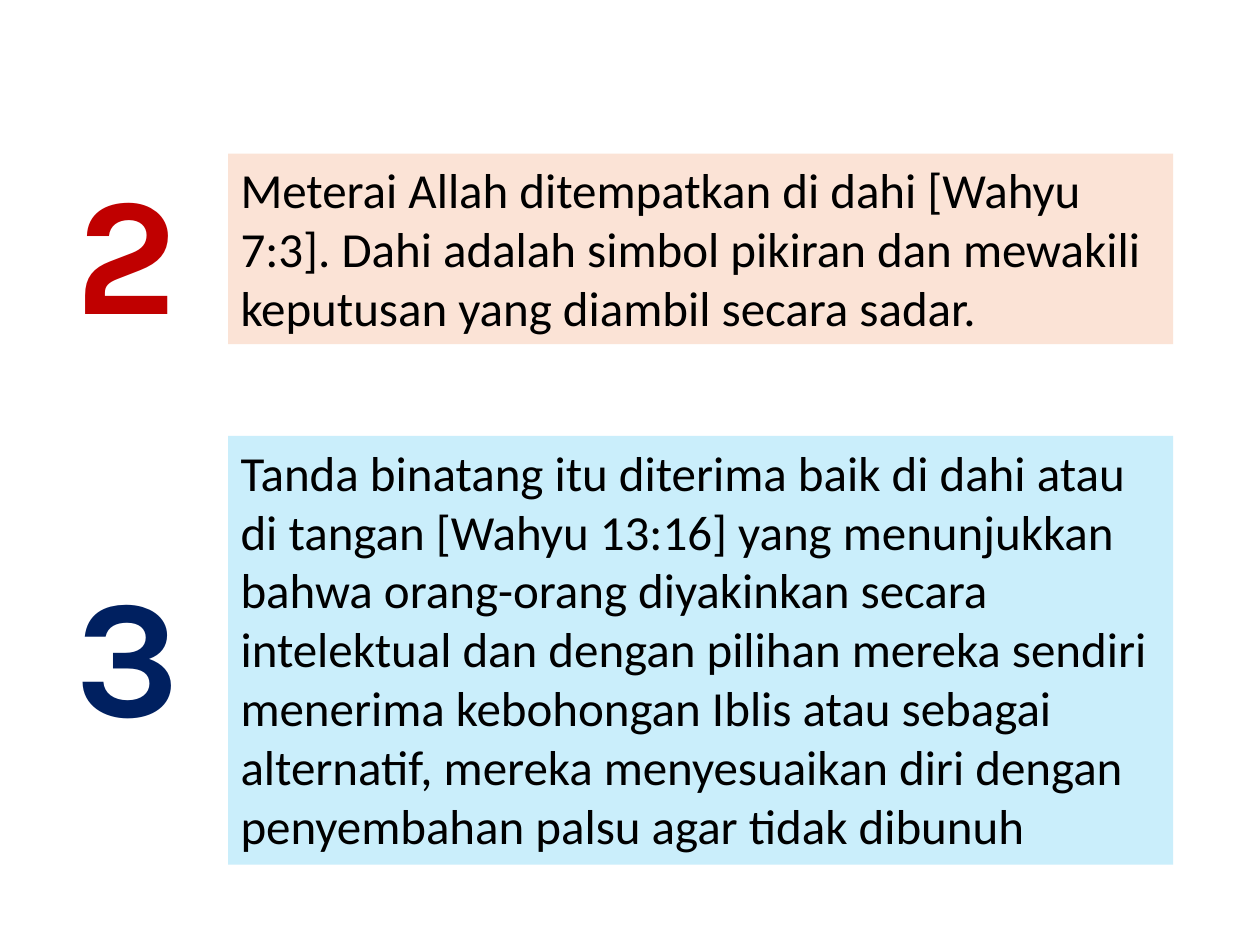
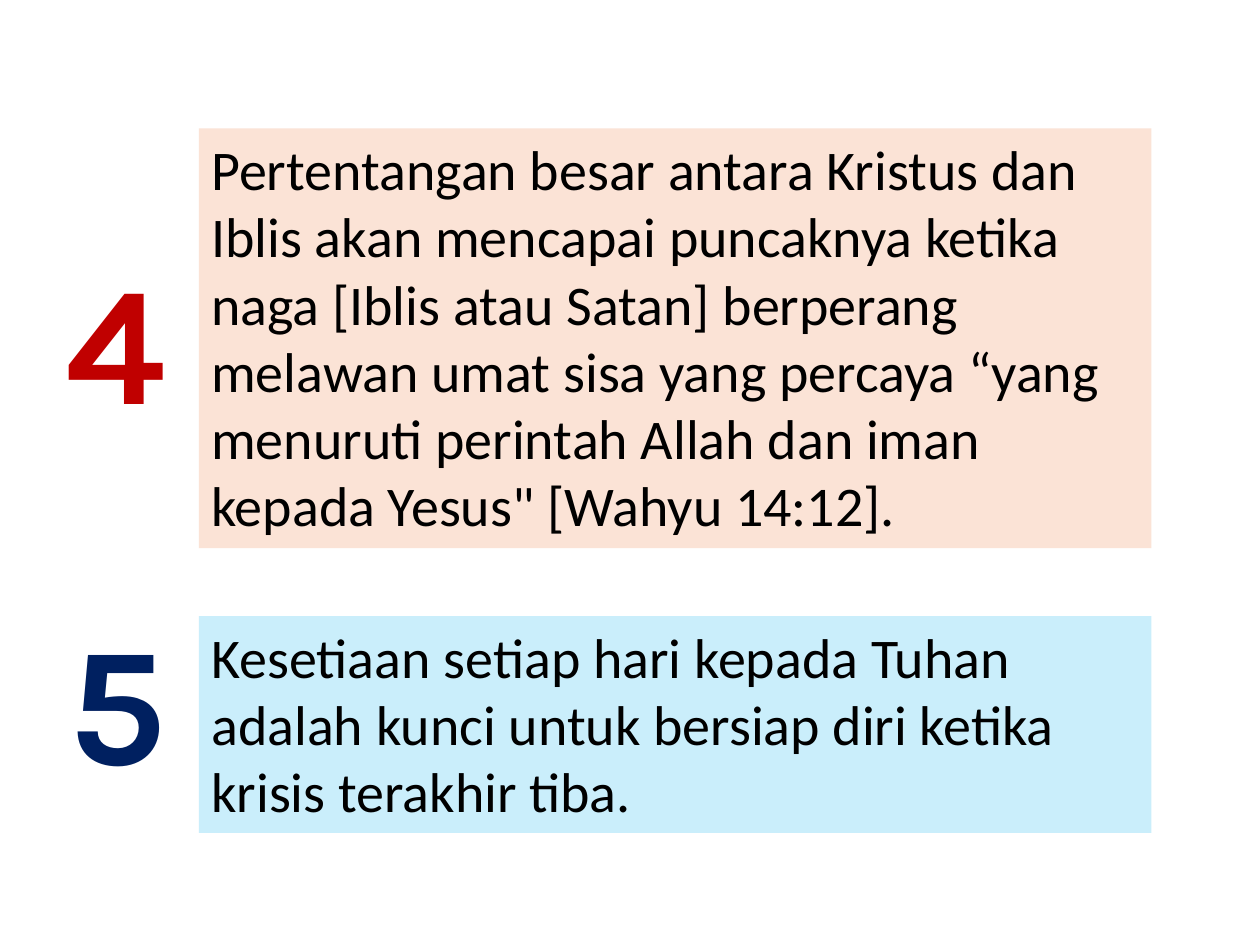
from lxml import etree
from pptx import Presentation, util as u
from pptx.dml.color import RGBColor
from pptx.enum import text
from pptx.oxml.ns import qn

COLOURS = {
    "ink": "000000", "outline": "FFFFFF",
    "red": "C00000", "navy": "002060",
    "peach": "FBE3D6", "sky": "CAEEFB",
}
NUMBER_WIDTH, NUMBER_HEIGHT = 2.24, 4.37
NUMBER_FORMAT = {"name": "Karla", "size": u.Pt(96), "bold": True}


def colour(name):
    return RGBColor.from_string(COLOURS[name])


class PointDeck:
    """Builds slides of numbered points; lengths are in centimetres."""

    def __init__(self):
        self.deck = Presentation()
        self.deck.slide_width, self.deck.slide_height = u.Cm(25.4), u.Cm(19.05)
        self.page = None

    def add_page(self):
        self.page = self.deck.slides.add_slide(self.deck.slide_layouts[6])

    def add_text(self, place, words, ink, style, align=None):
        box = self.page.shapes.add_textbox(*(u.Cm(length) for length in place))
        frame = box.text_frame
        frame.word_wrap = True
        frame.auto_size = text.MSO_AUTO_SIZE.SHAPE_TO_FIT_TEXT
        para = frame.paragraphs[0]
        para.alignment = align
        span = para.add_run()
        span.text = words
        for key, value in style.items():
            setattr(span.font, key, value)
        span.font.color.rgb = colour(ink)
        return box, span

    def add_panel(self, place, words, fill, size):
        style = {"name": "Calibri", "size": u.Pt(size)}
        box, _ = self.add_text(place, words, "ink", style)
        box.fill.solid()
        box.fill.fore_color.rgb = colour(fill)

    def add_number(self, left, top, digit, ink):
        place = (left, top, NUMBER_WIDTH, NUMBER_HEIGHT)
        _, span = self.add_text(place, digit, ink, NUMBER_FORMAT, text.PP_ALIGN.CENTER)
        line = etree.Element(qn("a:ln"), w=str(u.Pt(1.06)))
        fill = etree.SubElement(line, qn("a:solidFill"))
        etree.SubElement(fill, qn("a:srgbClr"), val=COLOURS["outline"])
        span.font._element.insert(0, line)

    def add_point(self, digit, words, theme, panel, size, number_left, lift=0):
        """Add a panel and its number, centred on the panel and then raised by lift."""
        ink, fill = theme
        self.add_panel(panel, words, fill, size)
        top = panel[1] + (panel[3] - NUMBER_HEIGHT) / 2 - lift
        self.add_number(number_left, top, digit, ink)


def main():
    warm, cool = ("red", "peach"), ("navy", "sky")
    points = PointDeck()

    points.add_page()
    points.add_point(
        "2",
        "Meterai Allah ditempatkan di dahi [Wahyu 7:3]. Dahi adalah simbol pikiran "
        "dan mewakili keputusan yang diambil secara sadar.",
        warm, (4.6, 3.1, 19.05, 3.84), 28, 1.27)
    points.add_point(
        "3",
        "Tanda binatang itu diterima baik di dahi atau di tangan [Wahyu 13:16] yang "
        "menunjukkan bahwa orang-orang diyakinkan secara intelektual dan dengan "
        "pilihan mereka sendiri menerima kebohongan Iblis atau sebagai alternatif, "
        "mereka menyesuaikan diri dengan penyembahan palsu agar tidak dibunuh",
        cool, (4.6, 8.79, 19.05, 8.64), 28, 1.27)

    points.add_page()
    points.add_point(
        "4",
        "Pertentangan besar antara Kristus dan Iblis akan mencapai puncaknya ketika "
        "naga [Iblis atau Satan] berperang melawan umat sisa yang percaya “yang "
        "menuruti perintah Allah dan iman kepada Yesus\" [Wahyu 14:12].",
        warm, (4.01, 2.59, 19.2, 8.46), 32, 1.07)
    points.add_point(
        "5",
        "Kesetiaan setiap hari kepada Tuhan adalah kunci untuk bersiap diri ketika "
        "krisis terakhir tiba.",
        cool, (4.01, 12.42, 19.2, 4.37), 32, 1.14, lift=0.51)

    points.deck.save("out.pptx")


if __name__ == "__main__":
    main()
